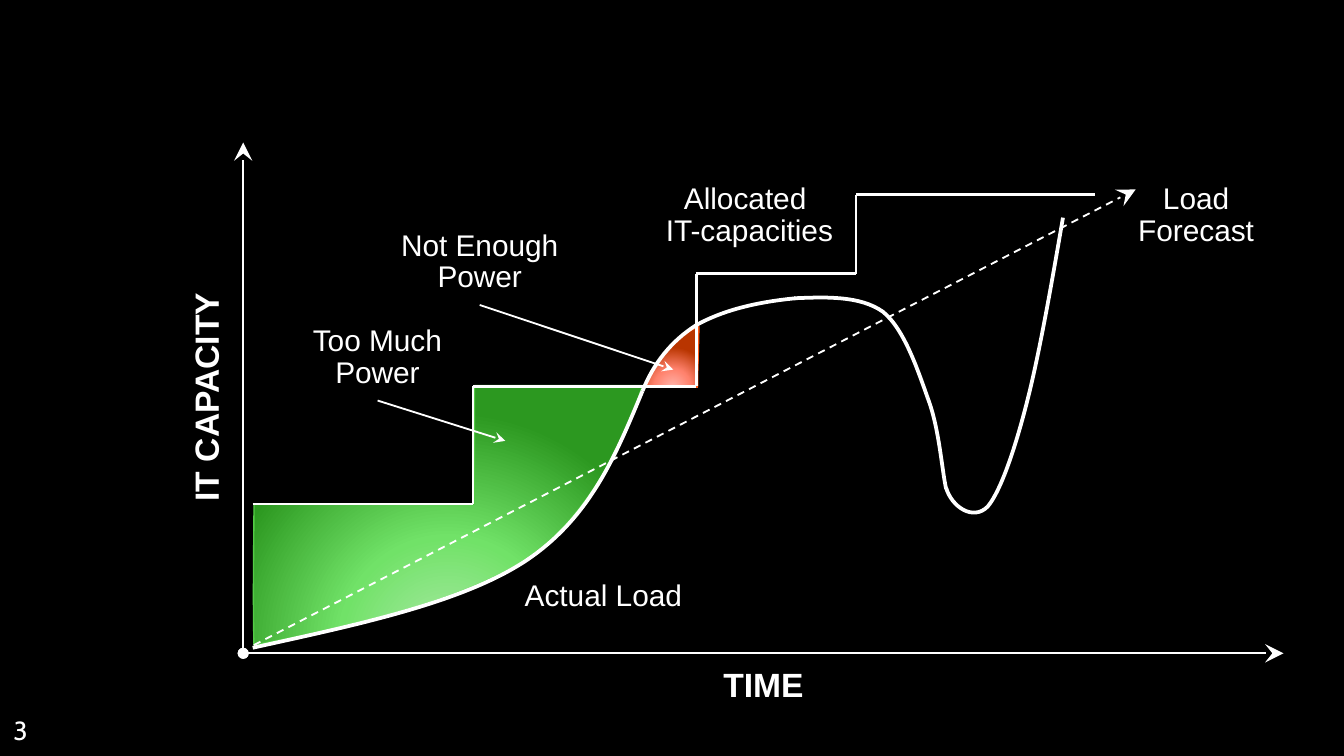
"""Build a slide comparing allocated IT capacity with forecast and actual load."""
from itertools import pairwise

from lxml.etree import SubElement
from pptx import Presentation
from pptx.dml.color import RGBColor
from pptx.enum.dml import MSO_LINE
from pptx.enum.shapes import MSO_CONNECTOR, MSO_SHAPE
from pptx.enum.text import MSO_ANCHOR, PP_ALIGN
from pptx.oxml import parse_xml
from pptx.oxml.ns import nsdecls, qn
from pptx.util import Pt

color = RGBColor.from_string
WHITE = "FFFFFF"


def draw_line(shapes, start, end, width, head=None, tail=None, tail_size="med"):
    line = shapes.add_connector(MSO_CONNECTOR.STRAIGHT, *[Pt(v) for v in start + end])
    line.line.color.rgb = color(WHITE)
    line.line.width = Pt(width)
    SubElement(line._element.spPr, qn("a:effectLst"))
    outline = line.line._get_or_add_ln()
    for tag, kind, size in (("a:headEnd", head, "med"), ("a:tailEnd", tail, tail_size)):
        if kind:
            SubElement(outline, qn(tag), type=kind, w=size, len=size)
    return line


def draw_curve(start, segments, line_color, width, closed=False):
    points = [(Pt(x), Pt(y)) for segment in segments for x, y in segment]
    builder = page.shapes.build_freeform(Pt(start[0]), Pt(start[1]))
    builder.add_line_segments(points, close=closed)
    curve = builder.convert_to_shape()
    curve.shadow.inherit = False
    curve.fill.background()
    curve.line.color.rgb = color(line_color)
    curve.line.width = Pt(width)
    steps = iter(list(curve._element.iter(qn("a:lnTo"))))
    for segment in segments:
        group = [next(steps) for _ in segment]
        if len(group) == 3:
            bezier = parse_xml(f"<a:cubicBezTo {nsdecls('a')}/>")
            group[0].addprevious(bezier)
            for step in group:
                bezier.append(step[0])
                step.getparent().remove(step)
    return curve


deck = Presentation()
deck.slide_width, deck.slide_height = Pt(720), Pt(405)
page = deck.slides.add_slide(deck.slide_layouts[6])
page.background.fill.solid()
page.background.fill.fore_color.rgb = color("000000")

shortage = ((373.7, 207.4), [
    [(373.7, 198.7), (374.4, 182.2), (374.4, 175)],
    [(366.5, 177.1), (349.2, 193), (346.3, 207.4)]])
surplus = ((136.1, 345.6), [
    [(135.4, 321.1), (136.1, 285.8), (136.1, 270)],
    [(254.2, 270)], [(254.2, 206.6)], [(344.2, 206.6)],
    [(334.1, 238.3), (313.2, 280.8), (276.5, 303.1)],
    [(235.4, 326.2), (179.3, 337), (136.1, 345.6)]])
for (start, segments), edge, stops in [
    (shortage, "FF5814", ("FFB4AB", "FF826D", "B93500")),
    (surplus, "53CC46", ("ABE9A6", "71E268", "2C9820")),
]:
    area = draw_curve(start, segments, edge, 0.75, closed=True)
    stop_xml = "".join(
        f'<a:gs pos="{position}"><a:srgbClr val="{stop}"/></a:gs>'
        for position, stop in zip((0, 46000, 100000), stops))
    gradient = parse_xml(
        f'<a:gradFill {nsdecls("a")} rotWithShape="1"><a:gsLst>{stop_xml}</a:gsLst>'
        '<a:path path="circle"><a:fillToRect l="50000" t="155000" r="50000" b="-55000"/>'
        "</a:path></a:gradFill>")
    properties = area._element.spPr
    properties.replace(properties.find(qn("a:noFill")), gradient)

capacity = page.shapes.add_group_shape()
corners = [(135.4, 270), (253.4, 270), (253.4, 207), (373, 207),
           (373, 146.6), (458.6, 146.6), (458.6, 104.4), (586.8, 104.4)]
for start, end in pairwise(corners):
    draw_line(capacity.shapes, start, end, 1.5)

origin = (130.3, 350)
for end in [(687.6, 350), (130.3, 76.3)]:
    draw_line(page.shapes, origin, end, 1, "oval", "stealth", "lg")
forecast = draw_line(
    page.shapes, (136, 345.6), (608.4, 101.5), 1, tail="stealth", tail_size="lg")
forecast.line.dash_style = MSO_LINE.DASH

load_curves = [
    ((425.5, 159.8), [[(442.8, 159.1), (460.8, 158.4), (473, 167)],
                      [(484.6, 176.4), (491.8, 198.7), (497.5, 214.6)],
                      [(503.3, 230.4), (504.7, 252.7), (506.9, 262)]]),
    ((506.9, 261.4), [[(509.8, 271.4), (521.3, 279.4), (529.2, 271.4)],
                      [(536.4, 262.8), (544.3, 239), (550.8, 213.1)],
                      [(557.3, 187.2), (563.8, 149.8), (569.5, 116.6)]]),
    ((135.4, 347), [[(190.8, 334.8), (246.2, 323.3), (280.8, 301)],
                    [(316.1, 277.9), (329.8, 244.1), (344.2, 209.5)]]),
    ((344.2, 209.5), [[(349.9, 195.1), (359.3, 182.9), (373, 174.2)],
                      [(385.9, 167), (403.2, 162), (426.2, 159.8)]]),
]
for start, segments in load_curves:
    draw_curve(start, segments, WHITE, 2)

labels = [
    (["Actual Load"], 276.5, 303.8, 93.6, 29.5, None),
    (["Allocated ", "IT-capacities"], 350, 92.2, 103, 46.8, Pt(17)),
    (["Too Much Power"], 154, 168.5, 96.5, 46, Pt(17)),
    (["Not Enough Power"], 194.4, 117.4, 125.3, 46, Pt(17)),
]
for lines, left, top, width, height, spacing in labels:
    box = page.shapes.add_shape(
        MSO_SHAPE.ROUNDED_RECTANGLE, Pt(left), Pt(top), Pt(width), Pt(height))
    box.shadow.inherit = False
    box.fill.background()
    box.line.fill.background()
    frame = box.text_frame
    frame.word_wrap = True
    frame.vertical_anchor = MSO_ANCHOR.MIDDLE
    frame.margin_left = frame.margin_right = 0
    frame.margin_top = frame.margin_bottom = Pt(3.6)
    para = frame.paragraphs[0]
    para.alignment = PP_ALIGN.CENTER
    para.line_spacing = spacing
    for number, line in enumerate(lines):
        if number:
            para.add_line_break()
        span = para.add_run()
        span.text = line
        span.font.name = "Arial"
        span.font.size = Pt(16)
        span.font.color.rgb = color(WHITE)

for start, end in [((257, 163.4), (360.7, 198)), ((202.3, 214.6), (270.7, 236.2))]:
    draw_line(page.shapes, start, end, 1, tail="stealth")

captions = [
    ("TIME", 355.7, 352, 106.6, 21.6, 18, "Arial", 0),
    ("IT CAPACITY", 38.5, 198, 144, 29.5, 18, "Arial", 270),
    ("Load Forecast", 586.8, 95, 108, 59.8, 16, "Arial", 0),
    ("3", 7.2, 378, 167.8, 21.6, 14, "Cabin", 0),
]
for text, left, top, width, height, size, font, rotation in captions:
    box = page.shapes.add_textbox(Pt(left), Pt(top), Pt(width), Pt(height))
    box.rotation = rotation
    frame = box.text_frame
    frame.word_wrap = True
    para = frame.paragraphs[0]
    para.alignment = PP_ALIGN.CENTER
    if size == 16:
        para.line_spacing = Pt(17)
    if size == 14:
        para.alignment = PP_ALIGN.LEFT
        frame.vertical_anchor = MSO_ANCHOR.BOTTOM
        frame.margin_left = frame.margin_right = 0
        frame.margin_top = frame.margin_bottom = 0
    span = para.add_run()
    span.text = text
    span.font.name = font
    span.font.size = Pt(size)
    span.font.bold = size == 18
    span.font.color.rgb = color(WHITE)

deck.save("out.pptx")
